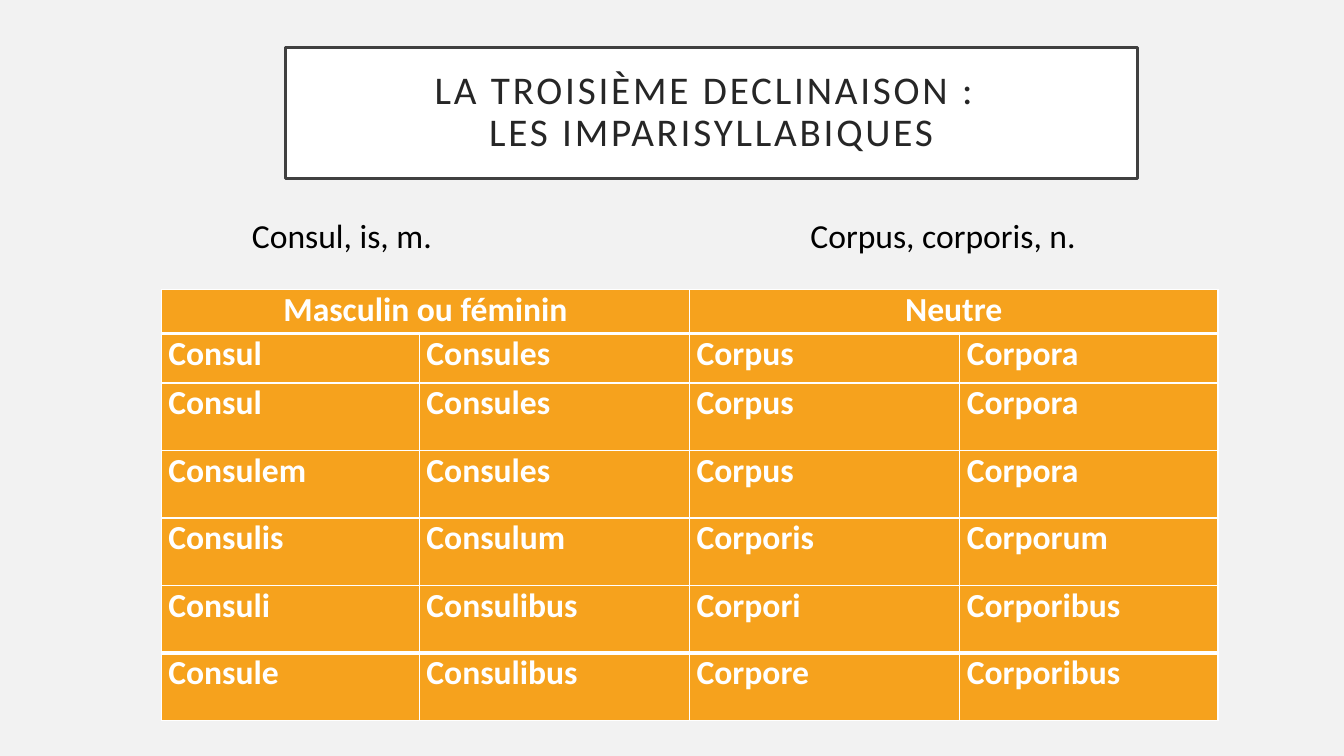
"""Build a slide with the declension table of Latin imparisyllabic nouns."""
from lxml.etree import SubElement
from pptx import Presentation
from pptx.dml.color import RGBColor
from pptx.enum.text import MSO_ANCHOR, MSO_AUTO_SIZE, PP_ALIGN
from pptx.oxml.ns import qn
from pptx.util import Pt

EMU_PER_PX = 9144
FONT = "Calibri"
WHITE = "FFFFFF"
ORANGE = "F6A21D"
GENDERS = ["Masculin ou féminin", "Neutre"]
FORMS = [
    ["Consul", "Consules", "Corpus", "Corpora"],
    ["Consul", "Consules", "Corpus", "Corpora"],
    ["Consulem", "Consules", "Corpus", "Corpora"],
    ["Consulis", "Consulum", "Corporis", "Corporum"],
    ["Consuli", "Consulibus", "Corpori", "Corporibus"],
    ["Consule", "Consulibus", "Corpore", "Corporibus"],
]
COLUMN_WIDTHS = [256, 268, 268, 256]
ROW_HEIGHTS = [44, 49] + [67] * 5
THICK_RULES = {1, len(FORMS)}


def px(*lengths):
    return [n * EMU_PER_PX for n in lengths]


def paint(fill, color):
    fill.solid()
    fill.fore_color.rgb = RGBColor.from_string(color)


def style(p, size, color, bold=False, align=PP_ALIGN.LEFT):
    p.alignment = align
    p.font.name = FONT
    p.font.size = Pt(size)
    p.font.bold = bold
    p.font.color.rgb = RGBColor.from_string(color)


def add_title(slide, text, box):
    sp = slide.shapes.title
    sp.left, sp.top, sp.width, sp.height = px(*box)
    paint(sp.fill, WHITE)
    paint(sp.line.fill, "404040")
    sp.line.width = Pt(2.5)
    tf = sp.text_frame
    tf.auto_size = MSO_AUTO_SIZE.NONE
    tf.vertical_anchor = MSO_ANCHOR.MIDDLE
    tf.margin_left, tf.margin_top, tf.margin_right, tf.margin_bottom = px(20, 20, 20, 20)
    tf.text = text
    p = tf.paragraphs[0]
    style(p, 28, "262626", align=PP_ALIGN.CENTER)
    p.line_spacing = 0.9
    for r in p.runs:
        r.font._element.set("spc", "200")


def add_label(slide, text, box):
    tf = slide.shapes.add_textbox(*px(*box)).text_frame
    tf.word_wrap = True
    tf.auto_size = MSO_AUTO_SIZE.SHAPE_TO_FIT_TEXT
    tf.text = text
    style(tf.paragraphs[0], 24, "000000")


def add_borders(cell, row):
    tc_pr = cell._tc.get_or_add_tcPr()
    widths = {
        "a:lnL": 1,
        "a:lnR": 1,
        "a:lnT": 3 if row in THICK_RULES else 1,
        "a:lnB": 3 if row + 1 in THICK_RULES else 1,
    }
    for tag, width in widths.items():
        ln = SubElement(tc_pr, qn(tag), w=str(Pt(width)))
        SubElement(SubElement(ln, qn("a:solidFill")), qn("a:srgbClr"), val=WHITE)


def format_cell(cell, row):
    add_borders(cell, row)
    paint(cell.fill, ORANGE)
    cell.margin_left, cell.margin_top, cell.margin_right, cell.margin_bottom = px(7, 0, 7, 0)
    align = PP_ALIGN.CENTER if row == 0 else PP_ALIGN.LEFT
    style(cell.text_frame.paragraphs[0], 24, WHITE, True, align)


def add_declension_table(slide, left, top):
    rows, cols = len(ROW_HEIGHTS), len(COLUMN_WIDTHS)
    box = px(left, top, sum(COLUMN_WIDTHS), sum(ROW_HEIGHTS))
    table = slide.shapes.add_table(rows, cols, *box).table
    for column, width in zip(table.columns, px(*COLUMN_WIDTHS)):
        column.width = width
    for row, height in zip(table.rows, px(*ROW_HEIGHTS)):
        row.height = height
    for i, gender in enumerate(GENDERS):
        table.cell(0, 2 * i).merge(table.cell(0, 2 * i + 1))
        table.cell(0, 2 * i).text = gender
    for i, forms in enumerate(FORMS, 1):
        for j, form in enumerate(forms):
            table.cell(i, j).text = form
    for i in range(rows):
        for j in range(cols):
            format_cell(table.cell(i, j), i)


def main():
    prs = Presentation()
    prs.slide_width, prs.slide_height = px(1333, 750)
    slide = prs.slides.add_slide(prs.slide_layouts[5])
    paint(slide.background.fill, "F2F2F2")
    title = "LA TROISIÈME DECLINAISON : \vLES IMPARISYLLABIQUES"
    add_title(slide, title, (283, 47, 845, 130))
    add_declension_table(slide, 160, 287)
    add_label(slide, "Consul, is, m.", (240, 208, 230, 50))
    add_label(slide, "Corpus, corporis, n.", (794, 208, 343, 50))
    prs.save("out.pptx")


if __name__ == "__main__":
    main()
